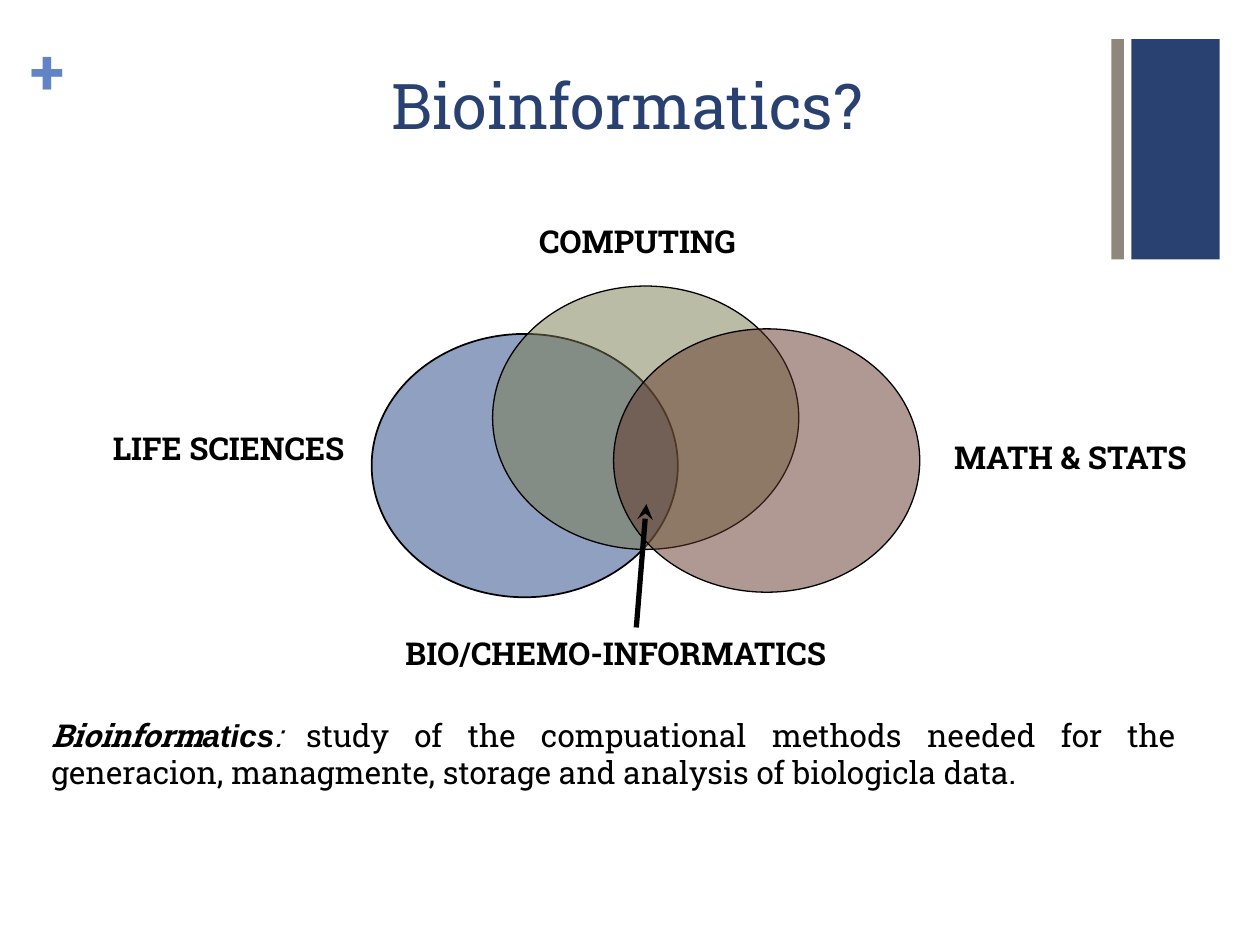
from lxml.etree import SubElement
from pptx import Presentation
from pptx.dml.color import RGBColor
from pptx.enum.shapes import MSO_CONNECTOR, MSO_SHAPE
from pptx.enum.text import PP_ALIGN
from pptx.oxml.ns import qn
from pptx.util import Inches, Pt

NAVY = RGBColor(0x29, 0x41, 0x71)
SKY = RGBColor(0x60, 0x84, 0xC6)
STONE = RGBColor(0x8E, 0x88, 0x7C)
BLUE = RGBColor(0x4A, 0x64, 0x99)
OLIVE = RGBColor(0x79, 0x7A, 0x4D)
BROWN = RGBColor(0x62, 0x35, 0x28)
BLACK = RGBColor(0, 0, 0)
SLAB, SANS = "Roboto Slab", "Arial"
LEFT, CENTER, JUSTIFY = PP_ALIGN.LEFT, PP_ALIGN.CENTER, PP_ALIGN.JUSTIFY

BARS = [(8.98, 0.7, NAVY), (8.82, 0.1, STONE)]  # left, width, colour
BAR_TOP, BAR_HEIGHT = 0.31, 1.75

CIRCLE_SIZE = (2.43, 2.09)
CIRCLE_LEFT, CIRCLE_STEP = 2.95, 0.96
CIRCLES = [  # top, colour, opacity %, line width
    (2.65, BLUE, 61, 1),
    (2.27, OLIVE, 50, 0.75),
    (2.61, BROWN, 50, 0.75),
]

LABEL_HEIGHT = 0.4
LABELS = [  # text, left, top, width, alignment
    ("LIFE SCIENCES", 0.73, 3.36, 2.17, CENTER),
    ("COMPUTING", 4.18, 1.71, 1.91, LEFT),
    ("MATH & STATS", 7.45, 3.43, 2.09, CENTER),
    ("BIO/CHEMO-INFORMATICS", 3.12, 4.98, 3.86, LEFT),
]
ARROW = (5.05, 4.98, 5.13, 4)

DEFINITION = [  # text, font, bold, italic
    ("Bioinform", SLAB, True, True),
    ("atics", SANS, True, True),
    (":", SLAB, False, True),
    (" study of the compuational methods needed for the generacion, "
     "managmente, storage and analysis of biologicla data. ", SLAB, False, False),
]

prs = Presentation()
prs.slide_width, prs.slide_height = Inches(10), Inches(7.5)
shapes = prs.slides.add_slide(prs.slide_layouts[6]).shapes


def add_filled(kind, box, color, opacity=100, line_width=None):
    s = shapes.add_shape(kind, *map(Inches, box))
    s.shadow.inherit = False
    s.fill.solid()
    s.fill.fore_color.rgb = color
    if opacity < 100:
        clr = s.fill._xPr.find(qn("a:solidFill"))[0]
        SubElement(clr, qn("a:alpha"), val=str(opacity * 1000))
    if line_width:
        s.line.color.rgb = BLACK
        s.line.width = Pt(line_width)
    else:
        s.line.fill.background()


def add_text(box, runs, size, color=BLACK, align=LEFT, inset=True):
    tf = shapes.add_textbox(*map(Inches, box)).text_frame
    tf.word_wrap = True
    if not inset:
        tf.margin_left = tf.margin_right = tf.margin_top = tf.margin_bottom = 0
    p = tf.paragraphs[0]
    p.alignment = align
    for text, font, bold, italic in runs:
        r = p.add_run()
        r.text = text
        r.font.name, r.font.size = font, Pt(size)
        r.font.bold, r.font.italic = bold, italic
        r.font.color.rgb = color


def add_arrow(x1, y1, x2, y2):
    s = shapes.add_connector(MSO_CONNECTOR.STRAIGHT, *map(Inches, (x1, y1, x2, y2)))
    s.line.color.rgb = BLACK
    s.line.width = Pt(3)
    SubElement(s.line._get_or_add_ln(), qn("a:tailEnd"), type="stealth")
    SubElement(s._element.spPr, qn("a:effectLst"))


for left, width, color in BARS:
    add_filled(MSO_SHAPE.RECTANGLE, (left, BAR_TOP, width, BAR_HEIGHT), color)
add_text((0.24, 0.25, 0.29, 0.61), [("+", SLAB, True, False)], 36, SKY, inset=False)
add_text((0.85, 0.48, 8.26, 1.22), [("Bioinformatics?", SLAB, False, False)],
         36, NAVY, CENTER)

for i, (top, color, opacity, line_width) in enumerate(CIRCLES):
    add_filled(MSO_SHAPE.OVAL, (CIRCLE_LEFT + i * CIRCLE_STEP, top, *CIRCLE_SIZE),
               color, opacity, line_width)
for text, left, top, width, align in LABELS:
    add_text((left, top, width, LABEL_HEIGHT), [(text, SLAB, True, False)], 18, align=align)
add_arrow(*ARROW)

add_text((0.31, 5.63, 9.12, 0.71), DEFINITION, 18, align=JUSTIFY)

prs.save("out.pptx")
